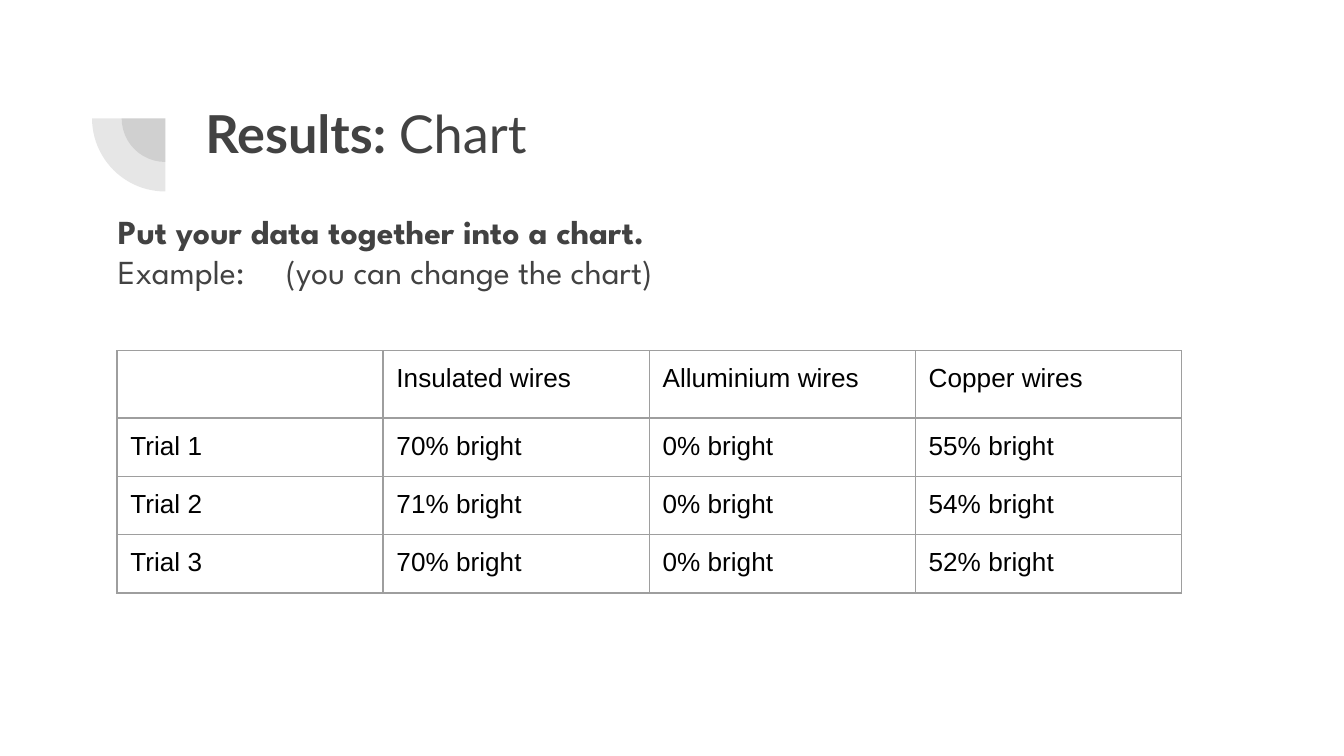
from lxml import etree
from pptx import Presentation
from pptx.dml.color import RGBColor
from pptx.enum.shapes import MSO_SHAPE as Preset
from pptx.oxml.ns import qn
from pptx.util import Inches, Pt

INK = "424242"
BORDER = "9E9E9E"
TABLE_ROWS = [
    ["", "Insulated wires", "Alluminium wires", "Copper wires"],
    ["Trial 1", "70% bright", "0% bright", "55% bright"],
    ["Trial 2", "71% bright", "0% bright", "54% bright"],
    ["Trial 3", "70% bright", "0% bright", "52% bright"],
]


def color(hex_text):
    return RGBColor.from_string(hex_text)


def write(paragraph, text, font="Arial", size=14, ink="000000", bold=False):
    run = paragraph.add_run()
    run.text = text
    run.font.name = font
    run.font.size = Pt(size)
    run.font.bold = bold
    run.font.color.rgb = color(ink)


def set_margins(target, margin=0.1):
    for side in ("left", "top", "right", "bottom"):
        setattr(target, f"margin_{side}", Inches(margin))


def add_text_frame(slide, left, top, width, height):
    box = slide.shapes.add_textbox(*map(Inches, (left, top, width, height)))
    frame = box.text_frame
    frame.word_wrap = True
    set_margins(frame)
    return frame


def add_tab_stop(paragraph, position):
    properties = paragraph._p.get_or_add_pPr()
    tabs = etree.SubElement(properties, qn("a:tabLst"))
    etree.SubElement(tabs, qn("a:tab"), pos=str(Inches(position)), algn="l")


def add_ornament(slide, center_x, center_y, diameters):
    for diameter in diameters:
        left, top = center_x - diameter / 2, center_y - diameter / 2
        pie = slide.shapes.add_shape(
            Preset.PIE, *map(Inches, (left, top, diameter, diameter)))
        pie.adjustments[0] = 108
        pie.adjustments[1] = 162
        pie.rotation = 270
        pie.shadow.inherit = False
        pie.line.fill.background()
        pie.fill.solid()
        pie.fill.fore_color.rgb = color(INK)
        fill_color = pie.fill._xPr.find(qn("a:solidFill"))[0]
        etree.SubElement(fill_color, qn("a:alpha"), val="13000")


def add_title(slide, left, top, width, height):
    paragraph = add_text_frame(slide, left, top, width, height).paragraphs[0]
    write(paragraph, "Results: ", font="Lato", size=28, ink=INK, bold=True)
    write(paragraph, "Chart", font="Lato", size=28, ink=INK)


def add_instructions(slide, left, top, width, height):
    frame = add_text_frame(slide, left, top, width, height)
    style = {"font": "League Spartan", "size": 18, "ink": INK}
    write(frame.paragraphs[0], "Put your data together into a chart.", bold=True, **style)
    example = frame.add_paragraph()
    add_tab_stop(example, 1.25)
    write(example, "Example:\t(you can change the chart)", **style)


def set_empty_size(paragraph, size, font="Arial"):
    ending = etree.SubElement(paragraph._p, qn("a:endParaRPr"), sz=str(size * 100))
    etree.SubElement(ending, qn("a:latin"), typeface=font)


def format_cell(cell):
    set_margins(cell)
    properties = cell._tc.get_or_add_tcPr()
    for edge in ("a:lnL", "a:lnR", "a:lnT", "a:lnB"):
        line = etree.SubElement(properties, qn(edge), w=str(Pt(0.75)))
        fill = etree.SubElement(line, qn("a:solidFill"))
        etree.SubElement(fill, qn("a:srgbClr"), val=BORDER)
    cell.fill.background()


def add_results_table(slide, left, top, width, row_height):
    row_count = len(TABLE_ROWS)
    frame = slide.shapes.add_table(
        row_count, len(TABLE_ROWS[0]),
        *map(Inches, (left, top, width, row_height * row_count)))
    table = frame.table
    table.first_row = False
    table.horz_banding = False
    for row, texts in zip(table.rows, TABLE_ROWS):
        row.height = Inches(row_height)
        for cell, text in zip(row.cells, texts):
            format_cell(cell)
            paragraph = cell.text_frame.paragraphs[0]
            if text:
                write(paragraph, text)
            else:
                set_empty_size(paragraph, 18)


def build_results_slide(presentation):
    slide = presentation.slides.add_slide(presentation.slide_layouts[6])
    add_ornament(slide, 1.23, 0.88, (0.65, 1.09))
    add_title(slide, 1.43, 0.65, 7.69, 1.09)
    add_instructions(slide, 0.78, 1.47, 8.44, 0.81)
    add_results_table(slide, 0.87, 2.61, 7.92, 0.42)


def main():
    presentation = Presentation()
    presentation.slide_width = Inches(10)
    presentation.slide_height = Inches(10) * 9 // 16
    build_results_slide(presentation)
    presentation.save("out.pptx")


if __name__ == "__main__":
    main()
